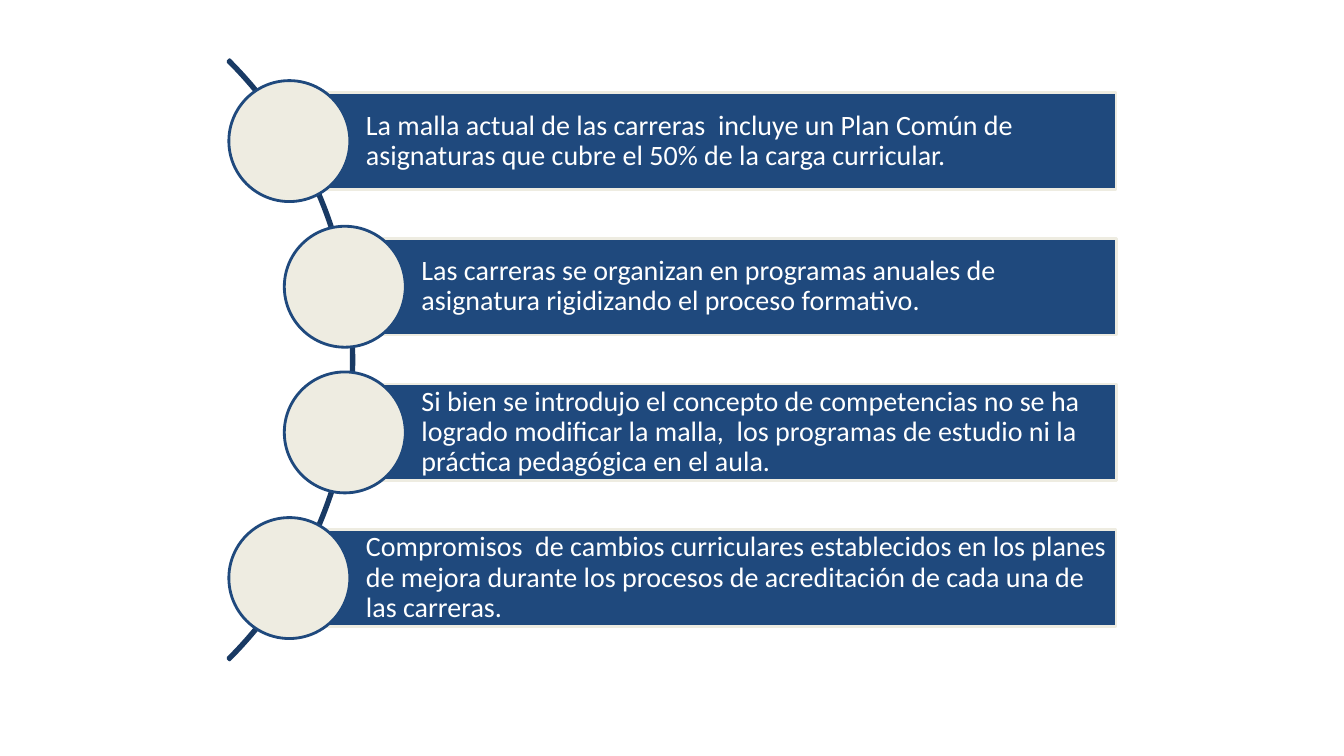
from pptx import Presentation
from pptx.dml.color import RGBColor
from pptx.enum.shapes import MSO_SHAPE
from pptx.enum.text import MSO_ANCHOR, PP_ALIGN
from pptx.util import Inches, Pt

BLOCK_ARC, BAR, CIRCLE = MSO_SHAPE.BLOCK_ARC, MSO_SHAPE.RECTANGLE, MSO_SHAPE.OVAL
MIDDLE, LEFT = MSO_ANCHOR.MIDDLE, PP_ALIGN.LEFT

NAVY = RGBColor(0x19, 0x3A, 0x64)
BLUE = RGBColor(0x1F, 0x49, 0x7D)
CREAM = RGBColor(0xEE, 0xEC, 0xE1)
WHITE = RGBColor(0xFF, 0xFF, 0xFF)

# Layout in inches
ARC_LEFT, ARC_TOP, ARC_SIZE = -4.91, -0.64, 8.42
FIRST_TOP, ROW_STEP = 0.8, 1.445
CIRCLE_SIZE, BAR_HEIGHT, BAR_RIGHT = 1.2, 0.96, 11.07
OUTER, INNER = 2.27, 2.82

# Left edge of the circle and wording of each row
ROWS = [
    (OUTER, "La malla actual de las carreras  incluye un Plan Común de "
            "asignaturas que cubre el 50% de la carga curricular."),
    (INNER, "Las carreras se organizan en programas anuales de asignatura "
            "rigidizando el proceso formativo."),
    (INNER, "Si bien se introdujo el concepto de competencias no se ha logrado "
            "modificar la malla,  los programas de estudio ni la práctica "
            "pedagógica en el aula."),
    (OUTER, "Compromisos  de cambios curriculares establecidos en los planes de "
            "mejora durante los procesos de acreditación de cada una de las "
            "carreras."),
]


def add_figure(page, kind, left, top, width, height, line, fill=None):
    figure = page.shapes.add_shape(
        kind, Inches(left), Inches(top), Inches(width), Inches(height))
    figure.shadow.inherit = False
    if fill is None:
        figure.fill.background()
    else:
        figure.fill.solid()
        figure.fill.fore_color.rgb = fill
    figure.line.color.rgb = line
    figure.line.width = Pt(2)
    return figure


def write_text(box, text, size=20, color=WHITE, font="Calibri", indent=0.76, margin=0.06):
    frame = box.text_frame
    frame.word_wrap = True
    frame.vertical_anchor = MIDDLE
    frame.margin_left = Inches(indent)
    frame.margin_top = frame.margin_right = frame.margin_bottom = Inches(margin)
    para = frame.paragraphs[0]
    para.alignment = LEFT
    para.line_spacing = 0.9
    span = para.add_run()
    span.text = text
    span.font.name = font
    span.font.size = Pt(size)
    span.font.color.rgb = color


def add_arc(page):
    arc = add_figure(page, BLOCK_ARC, ARC_LEFT, ARC_TOP, ARC_SIZE, ARC_SIZE, NAVY)
    # Start angle, end angle and thickness
    for index, value in enumerate((189, 27, 0.003)):
        arc.adjustments[index] = value


def add_row(page, left, top, text):
    # The bar starts at the centre of its circle
    bar_left = left + CIRCLE_SIZE / 2
    bar_top = top + (CIRCLE_SIZE - BAR_HEIGHT) / 2
    bar = add_figure(page, BAR, bar_left, bar_top, BAR_RIGHT - bar_left, BAR_HEIGHT,
                     CREAM, fill=BLUE)
    write_text(bar, text)
    add_figure(page, CIRCLE, left, top, CIRCLE_SIZE, CIRCLE_SIZE, BLUE, fill=CREAM)


def main():
    deck = Presentation()
    deck.slide_width, deck.slide_height = Inches(13.33), Inches(7.5)
    page = deck.slides.add_slide(deck.slide_layouts[6])

    # Curve behind the rows
    add_arc(page)

    # Bars with their circles
    for index, (left, text) in enumerate(ROWS):
        add_row(page, left, FIRST_TOP + index * ROW_STEP, text)

    deck.save("out.pptx")


if __name__ == "__main__":
    main()
